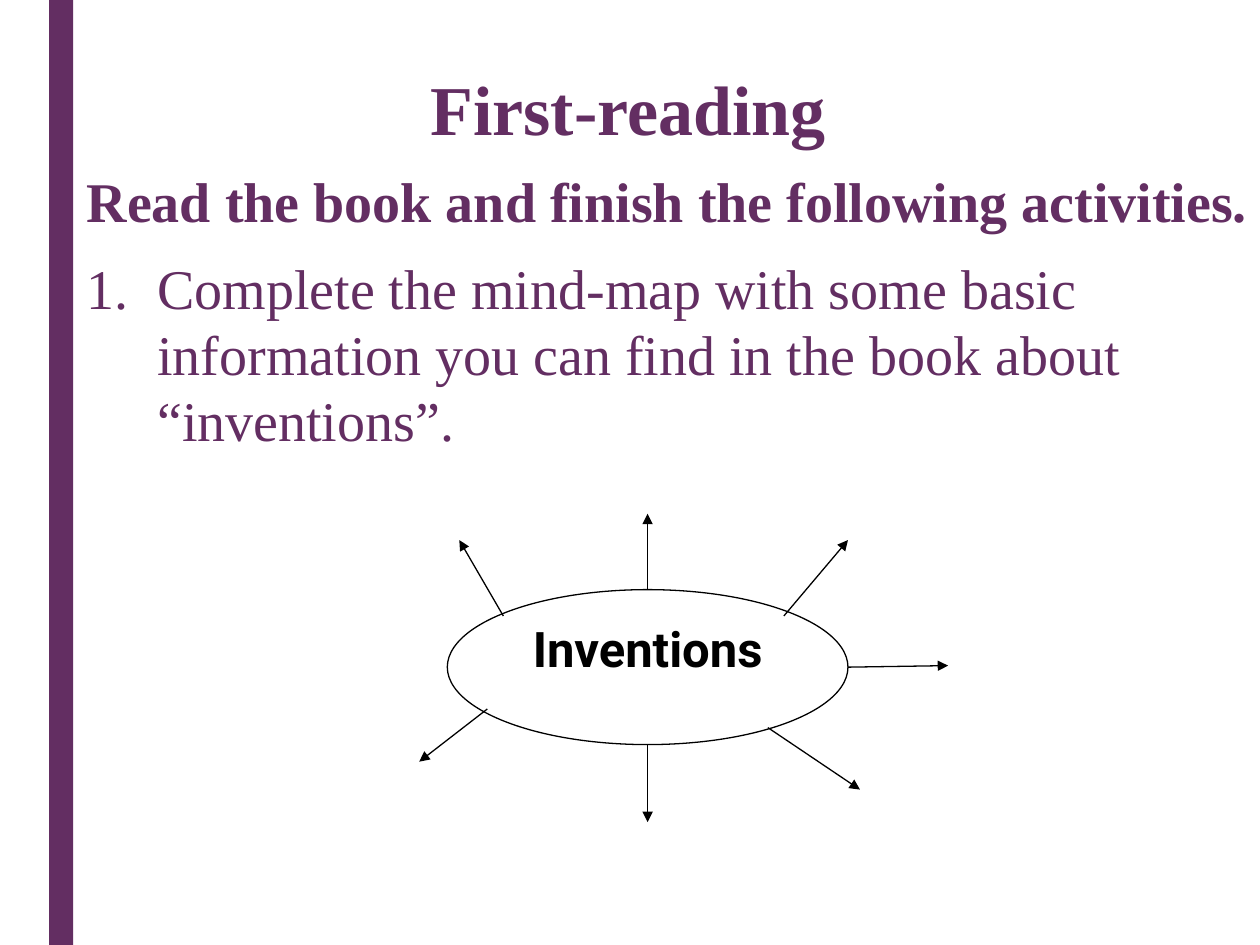
from collections import namedtuple
from dataclasses import dataclass

from lxml import etree
from pptx import Presentation
from pptx import util as u
from pptx.dml.color import RGBColor
from pptx.enum import shapes, text
from pptx.oxml.ns import qn

Box = namedtuple("Box", "left top width height")


@dataclass(frozen=True)
class Theme:
    plum: RGBColor = RGBColor(0x63, 0x2E, 0x62)
    ink: RGBColor = RGBColor(0, 0, 0)
    paper: RGBColor = RGBColor(255, 255, 255)
    serif: str = "Times New Roman"
    sans: str = "Roboto"
    title_size: int = 40
    body_size: int = 32
    hub_size: int = 28
    line_width: float = 0.75


THEME = Theme()
COLUMNS, ROWS = 100, 75
CELL = u.Inches(0.1)

# Start and end of each arrow, as shares of the hub's width and height
ARROWS = [
    ((0.5, 0), (0.5, -0.49)),
    ((0.14, 0.17), (0.03, -0.32)),
    ((0.5, 1), (0.5, 1.5)),
    ((0.8, 0.89), (1.03, 1.29)),
    ((1, 0.5), (1.25, 0.49)),
    ((0.84, 0.17), (1, -0.32)),
    ((0.1, 0.77), (-0.07, 1.11)),
]


def grid_box(column, row, columns, rows):
    return Box(*(round(count * CELL) for count in (column, row, columns, rows)))


def style(para, face, size, color, bold=True):
    para.font.name = face
    para.font.size = u.Pt(size)
    para.font.color.rgb = color
    para.font.bold = bold


def add_side_bar(page, box):
    bar = page.shapes.add_shape(shapes.MSO_SHAPE.RECTANGLE, *box)
    bar.shadow.inherit = False
    bar.fill.solid()
    bar.fill.fore_color.rgb = THEME.plum
    bar.line.fill.background()


def set_title(page, box, words):
    title = page.shapes.title
    title.left, title.top, title.width, title.height = box
    frame = title.text_frame
    frame.text = words
    frame.vertical_anchor = text.MSO_ANCHOR.TOP
    frame.auto_size = text.MSO_AUTO_SIZE.NONE
    para = frame.paragraphs[0]
    para.alignment = text.PP_ALIGN.CENTER
    para.line_spacing = 0.93
    style(para, THEME.serif, THEME.title_size, THEME.plum)


def number(para, indent):
    """Turn a paragraph into a numbered item with a hanging indent."""
    properties = para._p.get_or_add_pPr()
    properties.set("marL", str(indent))
    properties.set("indent", str(-indent))
    etree.SubElement(properties, qn("a:buFont"), typeface="+mj-lt")
    etree.SubElement(properties, qn("a:buAutoNum"), type="arabicPeriod")


def add_instructions(page, box, lead, task):
    frame = page.shapes.add_textbox(*box).text_frame
    frame.word_wrap = True
    frame.text = f"{lead}\n{task}"
    for para, bold in zip(frame.paragraphs, (True, False)):
        para.line_spacing = 0.98
        para.space_before, para.space_after = u.Pt(10), u.Pt(2)
        style(para, THEME.serif, THEME.body_size, THEME.plum, bold)
    number(frame.paragraphs[1], u.Inches(0.56))


def add_arrow(page, start, end):
    arrow = page.shapes.add_connector(shapes.MSO_CONNECTOR.STRAIGHT, *start, *end)
    arrow.line.color.rgb = THEME.ink
    arrow.line.width = u.Pt(THEME.line_width)
    etree.SubElement(arrow.line._get_or_add_ln(), qn("a:tailEnd"), type="triangle")
    etree.SubElement(arrow._element.spPr, qn("a:effectLst"))


def add_mind_map(page, box, topic):
    hub = page.shapes.add_shape(shapes.MSO_SHAPE.OVAL, *box)
    hub.shadow.inherit = False
    hub.fill.solid()
    hub.fill.fore_color.rgb = THEME.paper
    hub.line.color.rgb = THEME.ink
    hub.line.width = u.Pt(THEME.line_width)
    frame = hub.text_frame
    frame.text = topic
    frame.vertical_anchor = text.MSO_ANCHOR.TOP
    para = frame.paragraphs[0]
    para.alignment = text.PP_ALIGN.CENTER
    style(para, THEME.sans, THEME.hub_size, THEME.ink)

    def point(across, down):
        return (round(box.left + across * box.width),
                round(box.top + down * box.height))

    for start, end in ARROWS:
        add_arrow(page, point(*start), point(*end))


def main():
    deck = Presentation()
    deck.slide_width, deck.slide_height = COLUMNS * CELL, ROWS * CELL
    page = deck.slides.add_slide(deck.slide_layouts.get_by_name("Title Only"))
    add_side_bar(page, grid_box(3.9, 0, 1.9, ROWS))
    set_title(page, grid_box(2, 5.3, 95.7, 12.5), "First-reading")
    add_instructions(
        page, grid_box(5.9, 13, 96, 11.8),
        "Read the book and finish the following activities.",
        "Complete the mind-map with some basic information you can find "
        "in the book about “inventions”.")
    add_mind_map(page, grid_box(35.5, 46.8, 31.8, 12.3), "Inventions")
    deck.save("out.pptx")


if __name__ == "__main__":
    main()
